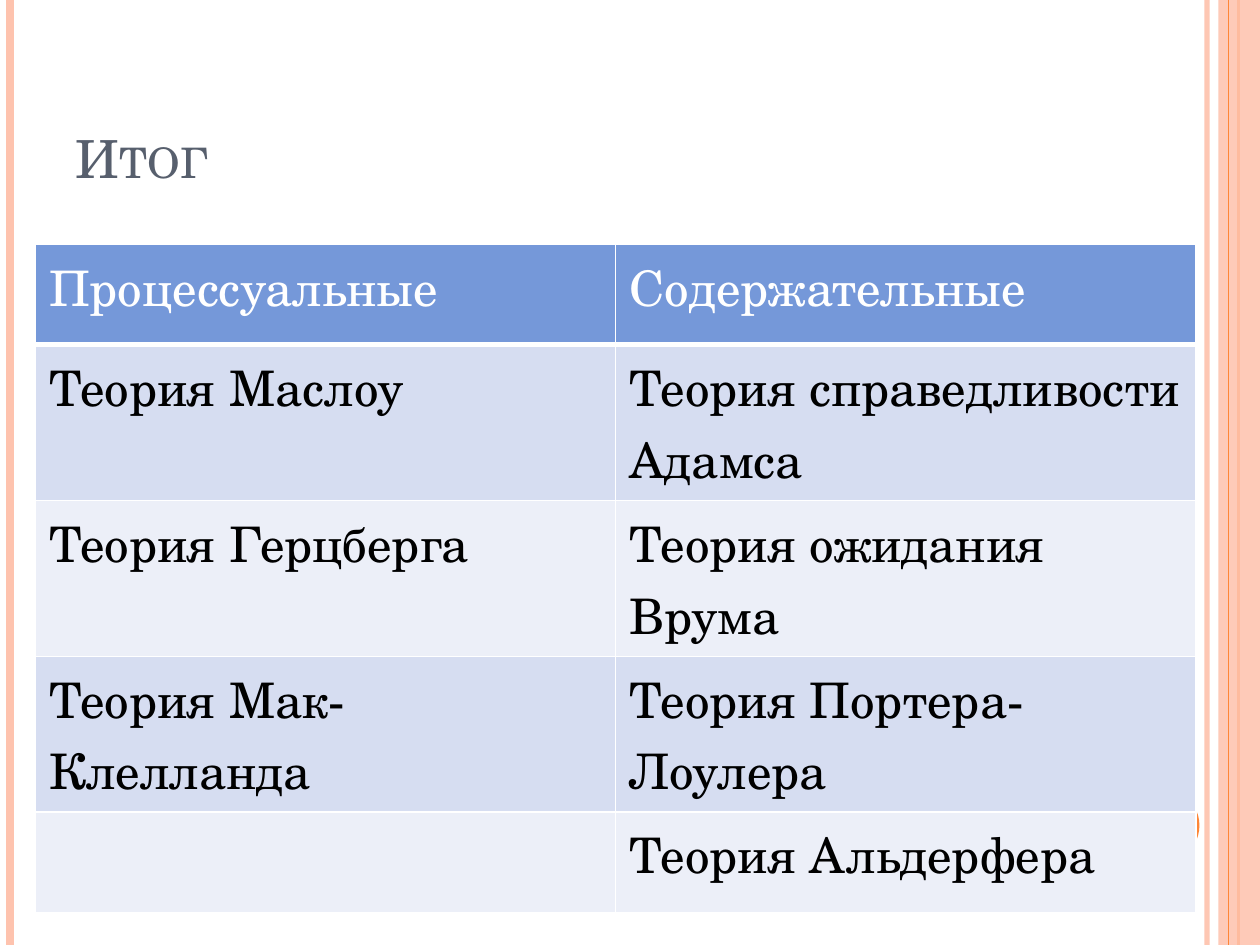
from lxml.etree import SubElement
from pptx import Presentation
from pptx.dml.color import RGBColor
from pptx.enum.shapes import MSO_CONNECTOR as Connector, MSO_SHAPE as Shape
from pptx.enum.text import MSO_ANCHOR as Anchor
from pptx.oxml.ns import qn
from pptx.util import Cm, Pt

WIDTH, HEIGHT = 25.4, 19.05
ORANGE, PEACH, SLATE = "FE8637", "FEC3AE", "575F6D"
WHITE, BLACK = "FFFFFF", "000000"
HEADER_FILL, BAND_FILLS = "7598D9", ("D6DDF1", "ECEFF8")


def paint(fill, color, opacity=100):
    fill.solid()
    fill.fore_color.rgb = RGBColor.from_string(color)
    if opacity < 100:
        tint = fill._xPr.find(qn("a:solidFill"))[0]
        SubElement(tint, qn("a:alpha"), val=str(opacity * 1000))


class SlideBuilder:
    font = "TeX Gyre Schola"

    def __init__(self, page):
        self.page = page

    def vertical_line(self, x, color, width, opacity=100):
        line = self.page.shapes.add_connector(
            Connector.STRAIGHT, Cm(x), Cm(0), Cm(x), Cm(HEIGHT))
        line.line.width = Pt(width)
        paint(line.line.fill, color, opacity)
        SubElement(line._element.spPr, qn("a:effectLst"))

    def shape(self, kind, left, top, width, height, color, opacity=100):
        shape = self.page.shapes.add_shape(
            kind, Cm(left), Cm(top), Cm(width), Cm(height))
        shape.shadow.inherit = False
        paint(shape.fill, color, opacity)
        shape.line.fill.background()

    def add_span(self, para, text, size, color, small_caps=False):
        span = para.add_run()
        span.text = text
        span.font.name = self.font
        span.font.size = Pt(size)
        paint(span.font.fill, color)
        if small_caps:
            span._r.get_or_add_rPr().set("cap", "small")

    def title(self, text, left, top, width, height):
        box = self.page.shapes.add_textbox(
            Cm(left), Cm(top), Cm(width), Cm(height))
        frame = box.text_frame
        frame.word_wrap = True
        frame.vertical_anchor = Anchor.BOTTOM
        self.add_span(frame.paragraphs[0], text, 30, SLATE, small_caps=True)

    def border(self, cell, bottom_width):
        props = cell._tc.get_or_add_tcPr()
        widths = {"lnL": 1, "lnR": 1, "lnT": 1, "lnB": bottom_width}
        for index, (side, width) in enumerate(widths.items()):
            edge = SubElement(props, qn(f"a:{side}"), w=str(Pt(width)))
            SubElement(SubElement(edge, qn("a:solidFill")),
                       qn("a:srgbClr"), val=WHITE)
            props.insert(index, edge)

    def table(self, rows, left, top, column_width, row_heights):
        columns = len(rows[0])
        table = self.page.shapes.add_table(
            len(rows), columns, Cm(left), Cm(top),
            Cm(column_width * columns), Cm(sum(row_heights))).table
        table.first_row = table.horz_banding = False
        for column in table.columns:
            column.width = Cm(column_width)
        for r, (texts, height) in enumerate(zip(rows, row_heights)):
            table.rows[r].height = Cm(height)
            for c, text in enumerate(texts):
                cell = table.cell(r, c)
                cell.margin_left = cell.margin_right = Cm(0.28)
                cell.margin_top = cell.margin_bottom = Cm(0.13)
                paint(cell.fill, BAND_FILLS[(r - 1) % 2] if r else HEADER_FILL)
                self.border(cell, 1 if r else 3)
                if text:
                    self.add_span(cell.text_frame.paragraphs[0], text, 28,
                                  BLACK if r else WHITE)


def main():
    deck = Presentation()
    deck.slide_width, deck.slide_height = Cm(WIDTH), Cm(HEIGHT)
    slide = SlideBuilder(deck.slides.add_slide(deck.slide_layouts[6]))

    # Side stripes and the dot
    slide.vertical_line(24.33, PEACH, 3, opacity=93)
    slide.vertical_line(0.2, PEACH, 4.5)
    slide.vertical_line(24.97, ORANGE, 1.5)
    slide.shape(Shape.RECTANGLE, 24.56, 0, 0.84, HEIGHT, PEACH, opacity=87)
    slide.vertical_line(24.77, ORANGE, 0.75)
    slide.shape(Shape.OVAL, 22.66, 15.88, 1.52, 1.52, ORANGE)

    # Title
    slide.title("Итог", 1.27, 0.76, 20.75, 3.18)

    # Theories of motivation
    theories = [
        ("Процессуальные", "Содержательные"),
        ("Теория Маслоу", "Теория справедливости Адамса"),
        ("Теория Герцберга", "Теория ожидания Врума"),
        ("Теория Мак-Клелланда", "Теория Портера-Лоулера"),
        ("", "Теория Альдерфера"),
    ]
    slide.table(theories, 0.71, 4.93, 11.7, [2.02, 3.14, 3.14, 3.14, 2.02])

    deck.save("out.pptx")


if __name__ == "__main__":
    main()
